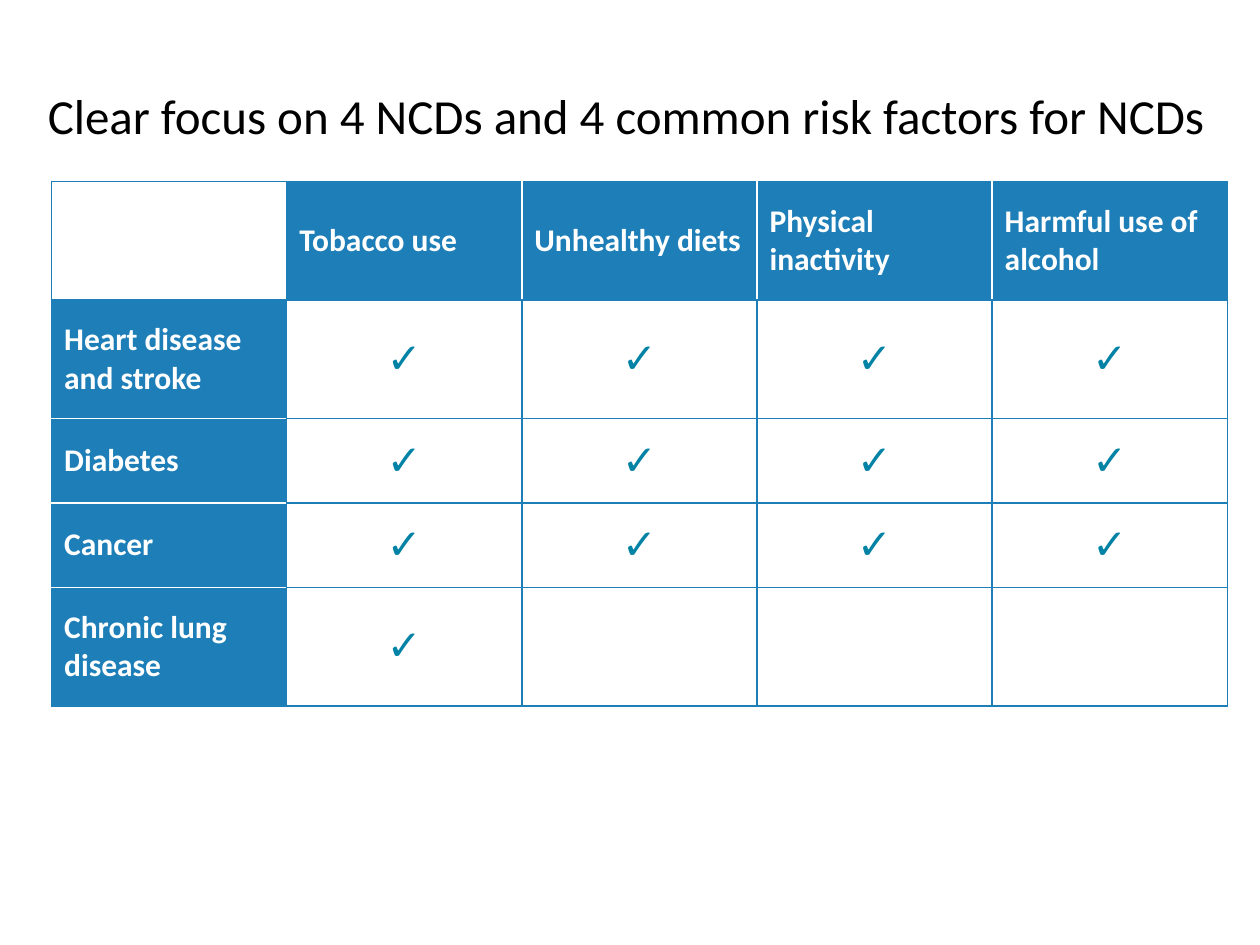
from lxml.etree import SubElement
from pptx import Presentation
from pptx.dml.color import RGBColor
from pptx.enum.text import MSO_ANCHOR, MSO_AUTO_SIZE, PP_ALIGN
from pptx.oxml.ns import qn
from pptx.util import Cm, Pt

BLUE = RGBColor(0x1E, 0x7F, 0xB8)
TEAL = RGBColor(0x02, 0x82, 0xA5)
WHITE = RGBColor(0xFF, 0xFF, 0xFF)
BLACK = RGBColor(0, 0, 0)

RISKS = ["Tobacco use", "Unhealthy diets", "Physical inactivity",
         "Harmful use of alcohol"]
# Disease, number of risk factors ticked from the left, row height in cm
ROWS = [("Heart disease and stroke", 4, 2.39), ("Diabetes", 4, 1.7),
        ("Cancer", 4, 1.7), ("Chronic lung disease", 1, 2.39)]
HEAD = 2.39
WIDTH = 4.74


class Deck:
    font = "Calibri"

    def __init__(self):
        self.file = Presentation()
        self.file.slide_width, self.file.slide_height = Cm(25.4), Cm(19.05)
        self.slide = self.file.slides.add_slide(self.file.slide_layouts[5])

    def add_text(self, para, text, size, color, bold=False):
        run = para.add_run()
        run.text = text
        run.font.name, run.font.size = self.font, Pt(size)
        run.font.bold, run.font.color.rgb = bold, color

    def title(self, text, left, top, width, height):
        shape = self.slide.shapes.title
        shape.left, shape.top = Cm(left), Cm(top)
        shape.width, shape.height = Cm(width), Cm(height)
        frame = shape.text_frame
        frame.word_wrap = True
        frame.auto_size = MSO_AUTO_SIZE.SHAPE_TO_FIT_TEXT
        frame.vertical_anchor = MSO_ANCHOR.TOP
        para = frame.paragraphs[0]
        para.alignment, para.line_spacing = PP_ALIGN.LEFT, 0.8
        self.add_text(para, text, 28, BLACK)

    def table(self, left, top, width, heights, count):
        grid = self.slide.shapes.add_table(
            len(heights), count, Cm(left), Cm(top),
            Cm(width * count), Cm(sum(heights))).table
        grid.first_row = grid.horz_banding = False
        for col in grid.columns:
            col.width = Cm(width)
        for row, height in zip(grid.rows, heights):
            row.height = Cm(height)
        return grid

    def border(self, cell, sides):
        props = cell._tc.get_or_add_tcPr()
        for side in "LRTB":
            line = SubElement(props, qn(f"a:ln{side}"), w=str(Pt(1)))
            fill = SubElement(line, qn("a:solidFill"))
            SubElement(fill, qn("a:srgbClr"), val=str(sides.get(side, BLUE)))

    def cell(self, cell, text, label, sides):
        self.border(cell, sides)
        cell.vertical_anchor = MSO_ANCHOR.MIDDLE
        para = cell.text_frame.paragraphs[0]
        if label:
            cell.fill.solid()
            cell.fill.fore_color.rgb = BLUE
            self.add_text(para, text, 18, WHITE, True)
        else:
            cell.fill.background()
            para.alignment = PP_ALIGN.CENTER
            if text:
                self.add_text(para, text, 24, TEAL)


def edges(spot, last, before, after):
    """White lines only where two blue label cells meet."""
    sides = {}
    if spot > 1:
        sides[before] = WHITE
    if 0 < spot < last:
        sides[after] = WHITE
    return sides


def main():
    deck = Deck()
    deck.title("Clear focus on 4 NCDs and 4 common risk factors for NCDs",
               0.71, 1.83, 24.18, 1.22)

    # Diseases against risk factors
    cells = [[""] + RISKS]
    for name, ticks, _ in ROWS:
        cells.append([name] + ["✓"] * ticks + [""] * (len(RISKS) - ticks))
    heights = [HEAD] + [row[2] for row in ROWS]
    grid = deck.table(1.04, 3.66, WIDTH, heights, len(cells[0]))
    for r, line in enumerate(cells):
        for c, text in enumerate(line):
            sides = {}
            if r == 0:
                sides = edges(c, len(RISKS), "L", "R")
            elif c == 0:
                sides = edges(r, len(ROWS), "T", "B")
            label = (r == 0) != (c == 0)
            deck.cell(grid.cell(r, c), text, label, sides)

    deck.file.save("out.pptx")


if __name__ == "__main__":
    main()
